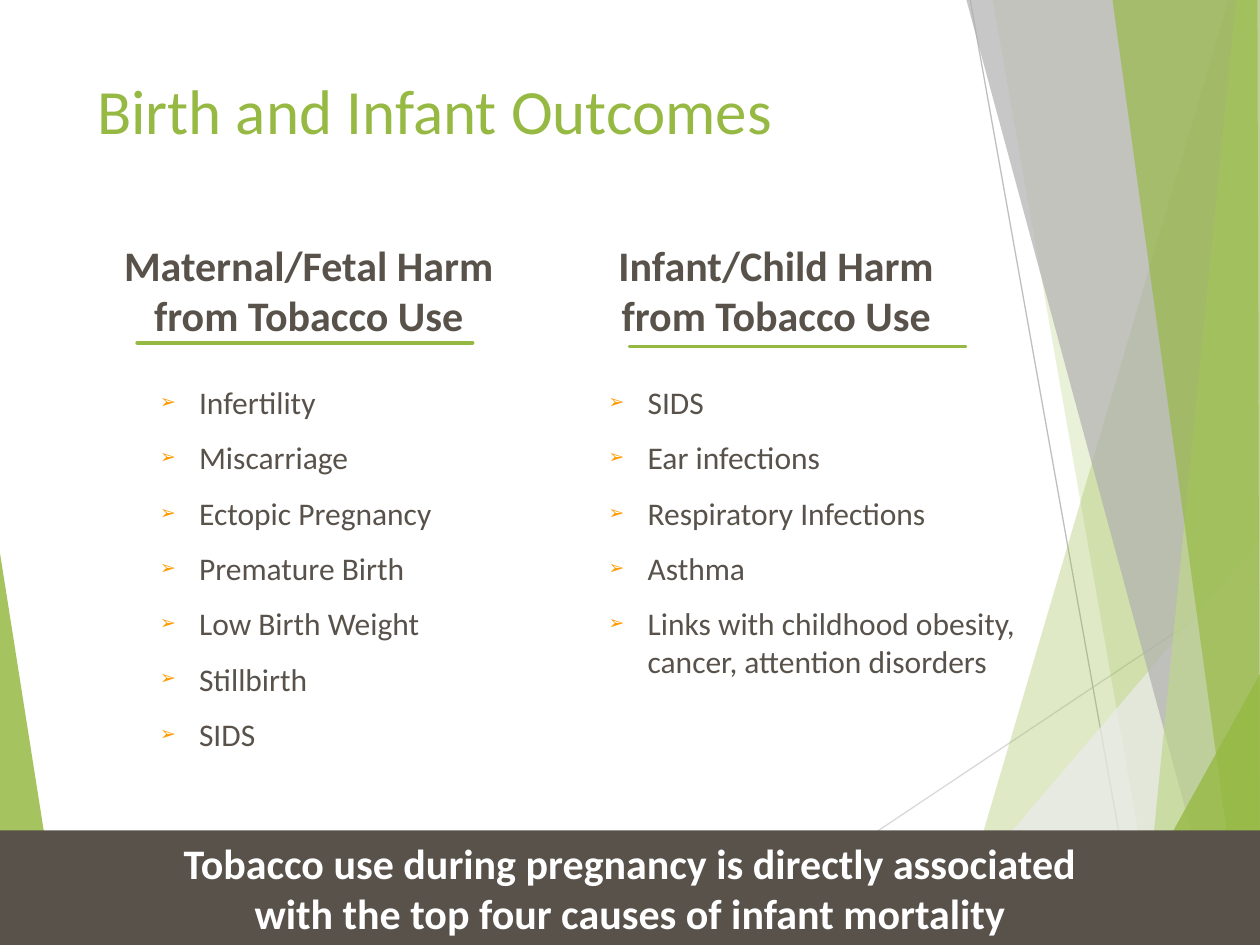
from dataclasses import dataclass

import lxml.etree
import pptx
import pptx.dml.color
import pptx.enum.shapes
import pptx.enum.text
import pptx.oxml.ns
import pptx.util

Inches = pptx.util.Inches
Pt = pptx.util.Pt
Align = pptx.enum.text.PP_ALIGN
Anchor = pptx.enum.text.MSO_ANCHOR
qn = pptx.oxml.ns.qn


@dataclass(frozen=True)
class Theme:
    """Colours, font and type sizes of the slide."""
    green: str = "96B943"
    pale_green: str = "C0D68D"
    gray: str = "B0B0B0"
    pale_gray: str = "EBEBEB"
    rule_gray: str = "BFBFBF"
    light_rule: str = "D9D9D9"
    text: str = "58524B"
    white: str = "FFFFFF"
    bullet: str = "FF9900"
    font: str = "Calibri"
    title_size: int = 36
    heading_size: int = 24
    list_size: int = 18


THEME = Theme()
W, H = 10, 7.5

FACETS = [
    ([(0, 4.39), (0.49, H), (0, H)], THEME.green, 85),
    ([(9.75, 0), (7.54, H), (W, H), (W, 0)], THEME.green, 30),
    ([(7.88, 0), (9.19, H), (W, H), (W, 0)], THEME.green, 20),
    ([(7.26, H), (W, 4.29), (W, H)], THEME.pale_gray, 72),
    ([(7.67, 0), (9.7, H), (W, H), (W, 0)], THEME.gray, 70),
    ([(9.81, 0), (9.07, H), (W, H), (W, 0)], THEME.pale_green, 70),
    ([(8.83, 0), (9.86, H), (W, H), (9.98, 0)], THEME.green, 65),
    ([(8.81, H), (W, 5.35), (W, H)], THEME.green, 80),
]
MATERNAL = ["Infertility", "Miscarriage", "Ectopic Pregnancy", "Premature Birth",
            "Low Birth Weight", "Stillbirth", "SIDS"]
INFANT = ["SIDS", "Ear infections", "Respiratory Infections", "Asthma",
          "Links with childhood obesity, cancer, attention disorders"]


def rgb(color):
    """Turn a hex string into a colour."""
    return pptx.dml.color.RGBColor.from_string(color)


def fill_shape(sp, color, alpha=100):
    """Give a shape a flat fill with the given opacity and no outline."""
    sp.shadow.inherit = False
    sp.fill.solid()
    sp.fill.fore_color.rgb = rgb(color)
    sp.line.fill.background()
    if alpha < 100:
        clr = sp.fill._xPr.find(".//" + qn("a:srgbClr"))
        lxml.etree.SubElement(clr, qn("a:alpha"), val=str(alpha * 1000))


def add_facet(s, points, color, alpha):
    """Draw one translucent polygon of the backdrop."""
    start, *rest = [(Inches(x), Inches(y)) for x, y in points]
    builder = s.shapes.build_freeform(*start, scale=1.0)
    builder.add_line_segments(rest, close=True)
    fill_shape(builder.convert_to_shape(), color, alpha)


def add_line(s, start, end, color, width, cap="flat"):
    """Draw a straight line without a shadow."""
    ends = [Inches(v) for v in (*start, *end)]
    line = s.shapes.add_connector(pptx.enum.shapes.MSO_CONNECTOR.STRAIGHT, *ends)
    line.line.color.rgb = rgb(color)
    line.line.width = Pt(width)
    line.line._get_or_add_ln().set("cap", cap)
    lxml.etree.SubElement(line._element.spPr, qn("a:effectLst"))


def set_text(sp, lines, size, color, bold=False, align=Align.LEFT, anchor=Anchor.TOP):
    """Fill a shape with formatted paragraphs."""
    tf = sp.text_frame
    tf.text = "\n".join(lines)
    tf.word_wrap = True
    tf.auto_size = pptx.enum.text.MSO_AUTO_SIZE.NONE
    tf.vertical_anchor = anchor
    for p in tf.paragraphs:
        p.alignment = align
        for r in p.runs:
            r.font.name = THEME.font
            r.font.size = Pt(size)
            r.font.bold = bold
            r.font.color.rgb = rgb(color)


def place(sp, left, top, width, height):
    """Move and size a placeholder."""
    sp.left, sp.top = Inches(left), Inches(top)
    sp.width, sp.height = Inches(width), Inches(height)


def add_bullet(p):
    """Give a paragraph an indented arrow bullet."""
    p.level = 1
    p.space_before = Pt(10)
    pPr = p._p.get_or_add_pPr()
    pPr.set("marL", str(Inches(0.81)))
    pPr.set("indent", str(Inches(-0.31)))
    clr = lxml.etree.SubElement(pPr, qn("a:buClr"))
    lxml.etree.SubElement(clr, qn("a:srgbClr"), val=THEME.bullet)
    lxml.etree.SubElement(pPr, qn("a:buSzPct"), val="60000")
    lxml.etree.SubElement(pPr, qn("a:buFont"), typeface=THEME.font)
    lxml.etree.SubElement(pPr, qn("a:buChar"), char="➢")


def set_title(sp, text):
    """Place and fill the title."""
    place(sp, 0.67, 0.52, 7.19, 0.95)
    set_text(sp, [text], THEME.title_size, THEME.green)


def set_heading(sp, text, box):
    """Place and fill a column heading."""
    place(sp, *box)
    set_text(sp, [text], THEME.heading_size, THEME.text, True, Align.CENTER, Anchor.BOTTOM)


def set_list(sp, items, box):
    """Place and fill a bulleted list."""
    place(sp, *box)
    set_text(sp, items, THEME.list_size, THEME.text)
    for p in sp.text_frame.paragraphs:
        add_bullet(p)


def add_band(s, lines):
    """Add the closing statement across the foot of the slide."""
    sp = s.shapes.add_shape(pptx.enum.shapes.MSO_SHAPE.RECTANGLE,
                            0, Inches(6.59), Inches(W), Inches(0.91))
    fill_shape(sp, THEME.text)
    set_text(sp, lines, THEME.heading_size, THEME.white, True, Align.CENTER, Anchor.MIDDLE)


def add_backdrop(s):
    """Draw the facets and thin lines and send them behind the text."""
    placeholders = [sp._element for sp in s.placeholders]
    add_facet(s, *FACETS[0])
    add_line(s, (5.61, H), (W, 4.57), THEME.light_rule, 0.75)
    add_line(s, (7.7, 0), (9.04, H), THEME.rule_gray, 0.75)
    for facet in FACETS[1:]:
        add_facet(s, *facet)
    for element in placeholders:
        s.shapes._spTree.append(element)


def main():
    """Build and save the slide."""
    prs = pptx.Presentation()
    prs.slide_width, prs.slide_height = Inches(W), Inches(H)
    s = prs.slides.add_slide(prs.slide_layouts.get_by_name("Comparison"))
    add_backdrop(s)
    ph = {sp.placeholder_format.idx: sp for sp in s.placeholders}
    set_title(ph[0], "Birth and Infant Outcomes")
    set_list(ph[2], MATERNAL, (0.67, 2.99, 3.38, 3.17))
    set_list(ph[4], INFANT, (4.23, 2.99, 4.12, 2.84))
    set_heading(ph[1], "Maternal/Fetal Harm from Tobacco Use", (0.58, 2.05, 3.74, 0.7))
    set_heading(ph[3], "Infant/Child Harm from Tobacco Use", (4.47, 1.8, 3.38, 0.95))
    add_band(s, ["Tobacco use during pregnancy is directly associated",
                 "with the top four causes of infant mortality"])
    for left, top in ((5, 2.75), (1.09, 2.72)):
        add_line(s, (left, top), (left + 2.66, top), THEME.green, 2.25, "rnd")
    prs.save("out.pptx")


if __name__ == "__main__":
    main()
